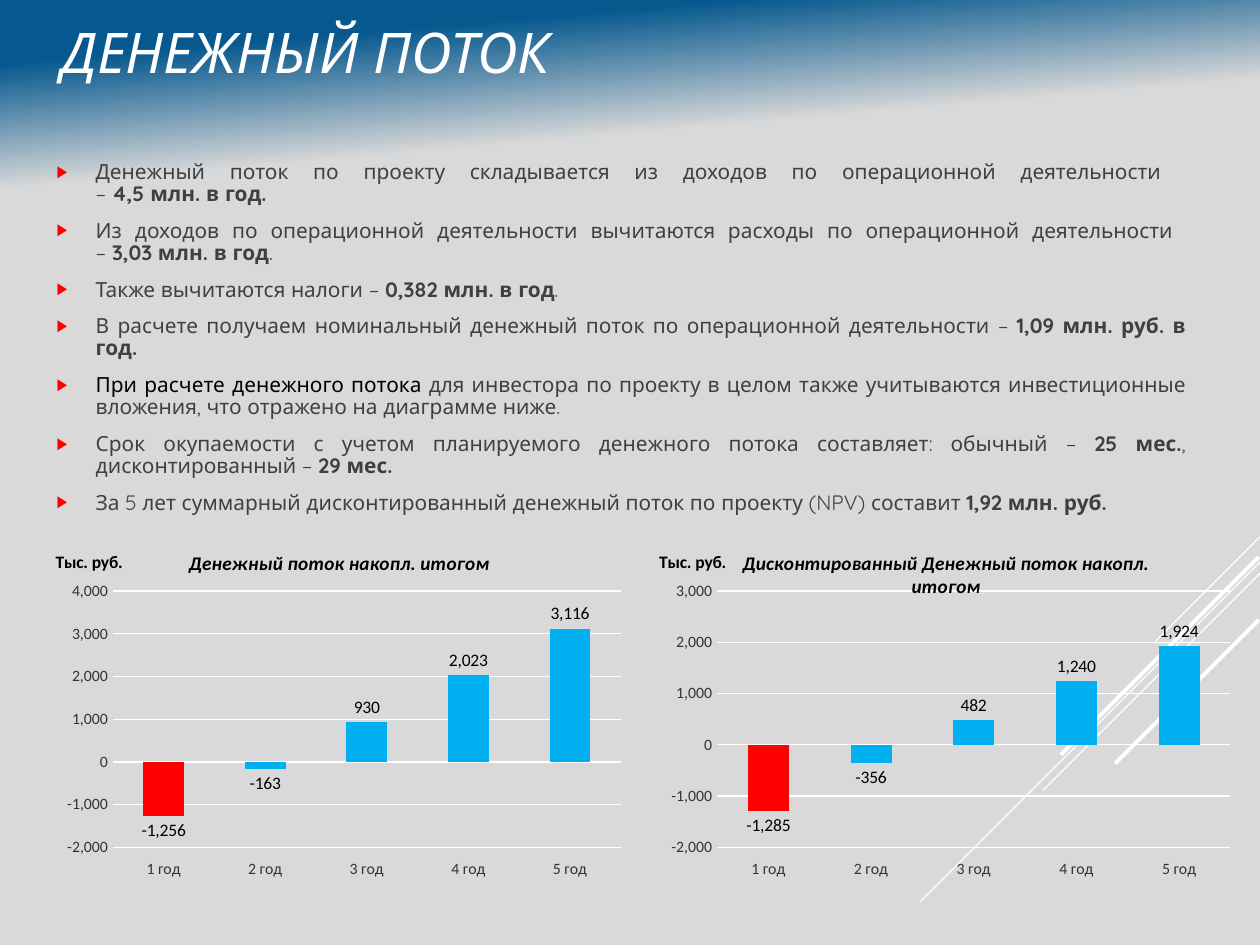
from dataclasses import dataclass
from lxml.etree import SubElement
from pptx import Presentation
from pptx.chart.data import CategoryChartData
from pptx.dml.color import RGBColor
from pptx.enum.chart import XL_CHART_TYPE, XL_LABEL_POSITION, XL_TICK_LABEL_POSITION, XL_TICK_MARK
from pptx.enum.shapes import MSO_CONNECTOR
from pptx.enum.text import MSO_ANCHOR, MSO_AUTO_SIZE, PP_ALIGN
from pptx.oxml import parse_xml
from pptx.oxml.ns import nsdecls, qn
from pptx.util import Inches, Pt


@dataclass(frozen=True)
class Theme:
    blue: str = "06588E"
    gray: str = "D9D9D9"
    white: str = "FFFFFF"
    black: str = "000000"
    text: str = "404040"
    axis: str = "333333"
    bar: str = "00B0F0"
    red: str = "FF0000"
    face: str = "Quicksand"
    plot: str = "Calibri"
    head: float = 32
    body: float = 11.9
    name: float = 11
    label: float = 10
    tick: float = 9


T = Theme()
WIDE, HIGH = Inches(10), Inches(7.5)

TITLE = "ДЕНЕЖНЫЙ ПОТОК"
N, B, K = "normal", "bold", "black"
ITEMS = [
    [("Денежный поток по проекту складывается из доходов по операционной деятельности \n– ", N),
     ("4,5 млн. в год.", B)],
    [("Из доходов по операционной деятельности вычитаются расходы по операционной деятельности \n– ", N),
     ("3,03 млн. в год", B), (".", N)],
    [("Также вычитаются налоги – ", N), ("0,382 млн. в год", B), (".", N)],
    [("В расчете получаем номинальный денежный поток по операционной деятельности – ", N),
     ("1,09 млн. руб. в год.", B)],
    [("При расчете денежного потока ", K),
     ("для инвестора по проекту в целом также учитываются инвестиционные вложения, "
      "что отражено на диаграмме ниже.", N)],
    [("Срок окупаемости с учетом планируемого денежного потока составляет: обычный – ", N),
     ("25 мес.", B), (", дисконтированный – ", N), ("29 мес.", B)],
    [("За 5 лет суммарный дисконтированный денежный поток по проекту (NPV) составит ", N),
     ("1,92 млн. руб.", B)],
]
YEARS = [f"{n} год" for n in range(1, 6)]
UNIT = "Тыс. руб."
CHARTS = [
    ("Денежный поток накопл. итогом", (-1256, -163, 930, 2023, 3116), 4000, (3.7, 46.5)),
    ("Дисконтированный Денежный поток накопл. итогом", (-1285, -356, 482, 1240, 1924), 3000, (51.6, 47)),
]
RAYS = [
    (100, 56.8, 8.3, 0.75),
    (100, 59.47, 27, 0.75),
    (100, 60.67, 17.2, 0.75),
    (99.9, 58.93, 15.7, 2.25),
    (99.9, 65.6, 11.4, 2.25),
]


def rgb(code):
    return RGBColor.from_string(code)


def place(x, y, w, h):
    return [int(side * part / 100) for side, part in zip((WIDE, HIGH) * 2, (x, y, w, h))]


def move(shape, *area):
    shape.left, shape.top, shape.width, shape.height = place(*area)


def style(font, size, color, face, bold=False, italic=False):
    font.size, font.name, font.bold, font.italic = Pt(size), face, bold, italic
    font.color.rgb = rgb(color)


def write(para, text, *look, **kind):
    for n, part in enumerate(text.split("\n")):
        if n:
            para.add_line_break()
        run = para.add_run()
        run.text = part
        style(run.font, *look, **kind)


def bullet(para):
    props = para._p.get_or_add_pPr()
    props.set("marL", str(Inches(0.31)))
    props.set("indent", str(-Inches(0.31)))
    SubElement(SubElement(props, qn("a:buClr")), qn("a:srgbClr"), val=T.red)
    SubElement(props, qn("a:buSzPct"), val="80000")
    SubElement(props, qn("a:buFont"), typeface="Arial")
    SubElement(props, qn("a:buChar"), char="▶")


def pin(node, spot, **parts):
    for old in node.findall(qn("c:layout")):
        node.remove(old)
    lay = parse_xml(f"<c:layout {nsdecls('c')}><c:manualLayout/></c:layout>")
    for tag, val in parts.items():
        SubElement(lay[0], qn("c:" + tag), val=str(val))
    node.insert(spot, lay)


def backdrop(slide):
    fill = slide.background.fill
    fill.gradient()
    fill.gradient_angle = 275
    for stop, (pos, color) in zip(fill.gradient_stops, ((0.06, T.blue), (0.18, T.gray))):
        stop.position = pos
        stop.color.rgb = rgb(color)
    for x, y, run, width in RAYS:
        left, top, dx, _ = place(x, y, run, 0)
        ray = slide.shapes.add_connector(MSO_CONNECTOR.STRAIGHT, left, top, left - dx, top + dx)
        ray.line.color.rgb = rgb(T.white)
        ray.line.width = Pt(width)
        SubElement(ray._element.spPr, qn("a:effectLst"))


def frame(shape):
    text = shape.text_frame
    text.word_wrap = True
    text.auto_size = MSO_AUTO_SIZE.NONE
    text.vertical_anchor = MSO_ANCHOR.MIDDLE
    return text


def heading(shape):
    move(shape, 0, -0.4, 100, 11.6)
    para = frame(shape).paragraphs[0]
    para.alignment = PP_ALIGN.LEFT
    para._p.get_or_add_pPr().set("marL", str(Inches(0.39)))
    write(para, TITLE, T.head, T.white, T.face, italic=True)


def points(shape):
    move(shape, 3.5, 15.33, 91.6, 40.93)
    text = frame(shape)
    for n, item in enumerate(ITEMS):
        para = text.add_paragraph() if n else text.paragraphs[0]
        para.alignment = PP_ALIGN.JUSTIFY
        para.line_spacing = 0.88
        para.space_before, para.space_after = Pt(2.4), Pt(6)
        bullet(para)
        for words, kind in item:
            write(para, words, T.body, T.black if kind == K else T.text, T.face, bold=kind == B)


def column(slide, name, vals, top, span):
    data = CategoryChartData(number_format="#,##0")
    data.categories = YEARS
    data.add_series(name, vals)
    area = place(span[0], 56.27, span[1], 40.8)
    chart = slide.shapes.add_chart(XL_CHART_TYPE.COLUMN_CLUSTERED, *area, data).chart
    style(chart.font, T.label, T.black, T.plot)
    chart.has_legend = False
    write(chart.chart_title.text_frame.paragraphs[0], name, T.name, T.black, T.plot, bold=True, italic=True)
    pin(chart._chartSpace.chart.plotArea, 0, layoutTarget="inner", xMode="edge", yMode="edge",
        x=0.113, y=0.154, w=0.867, h=0.665)

    cat, val = chart.category_axis, chart.value_axis
    for axis in (cat, val):
        axis.major_tick_mark = axis.minor_tick_mark = XL_TICK_MARK.NONE
        style(axis.tick_labels.font, T.tick, T.axis, T.plot)
    cat.tick_label_position = XL_TICK_LABEL_POSITION.LOW
    val.minimum_scale, val.maximum_scale, val.major_unit = -2000, top, 1000
    val.tick_labels.number_format = "#,##0"
    val.tick_labels.number_format_is_linked = False
    val.format.line.fill.background()
    for line in (cat.format.line, val.major_gridlines.format.line):
        line.color.rgb = rgb(T.white)
        line.width = Pt(0.75)
    unit = val.axis_title
    write(unit.text_frame.paragraphs[0], UNIT, T.label, T.black, T.plot, bold=True)
    unit.text_frame._txBody.bodyPr.set("rot", "0")
    unit.text_frame._txBody.bodyPr.set("vert", "horz")
    pin(unit._element, 1, xMode="edge", yMode="edge", x=0.01, y=0.04)

    plot = chart.plots[0]
    plot.gap_width = 150
    plot.vary_by_categories = False
    bars = plot.series[0]
    bars.invert_if_negative = False
    for part, color in ((bars, T.bar), (bars.points[0], T.red)):
        part.format.fill.solid()
        part.format.fill.fore_color.rgb = rgb(color)
    tags = bars.data_labels
    tags.show_value = True
    tags.number_format = "#,##0"
    tags.number_format_is_linked = False
    tags.position = XL_LABEL_POSITION.OUTSIDE_END
    style(tags.font, T.label, T.black, T.plot)


def main():
    deck = Presentation()
    deck.slide_width, deck.slide_height = WIDE, HIGH
    slide = deck.slides.add_slide(deck.slide_layouts[1])
    backdrop(slide)
    heading(slide.shapes.title)
    points(slide.placeholders[1])
    for chart in CHARTS:
        column(slide, *chart)
    deck.save("out.pptx")


if __name__ == "__main__":
    main()
